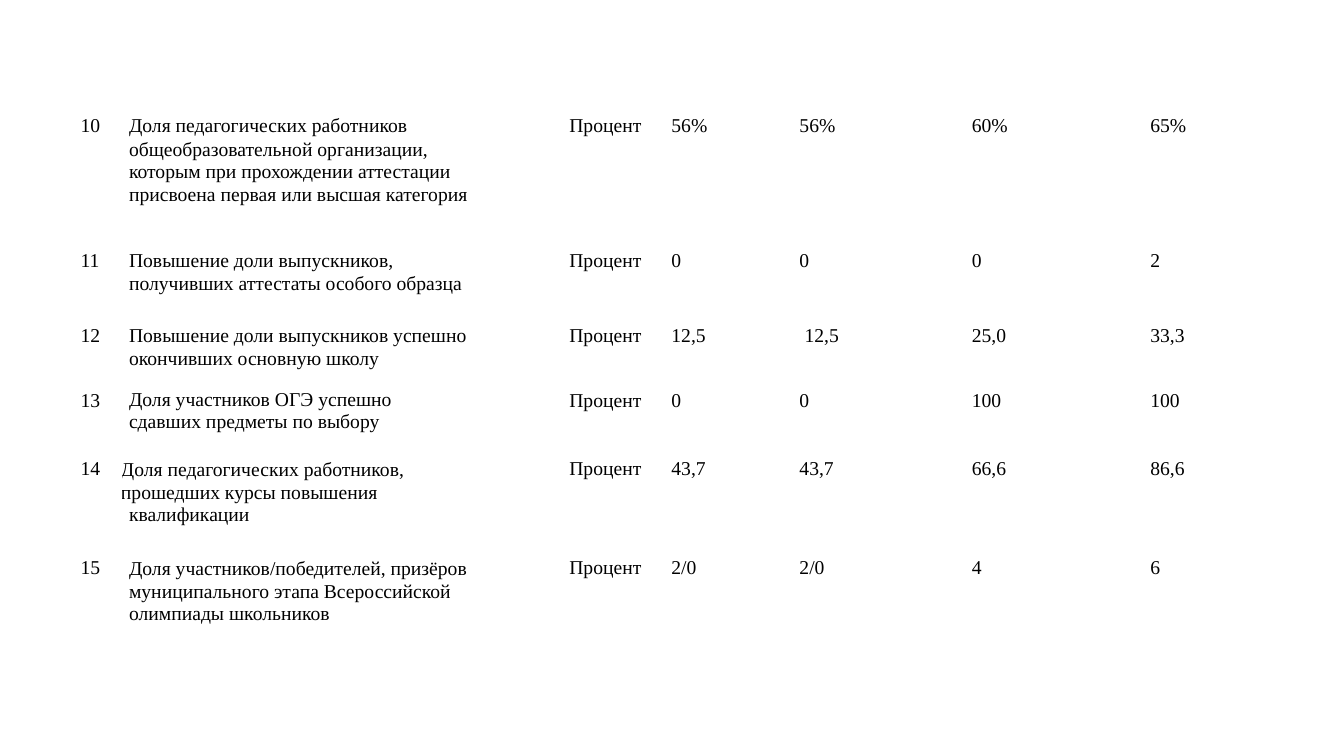
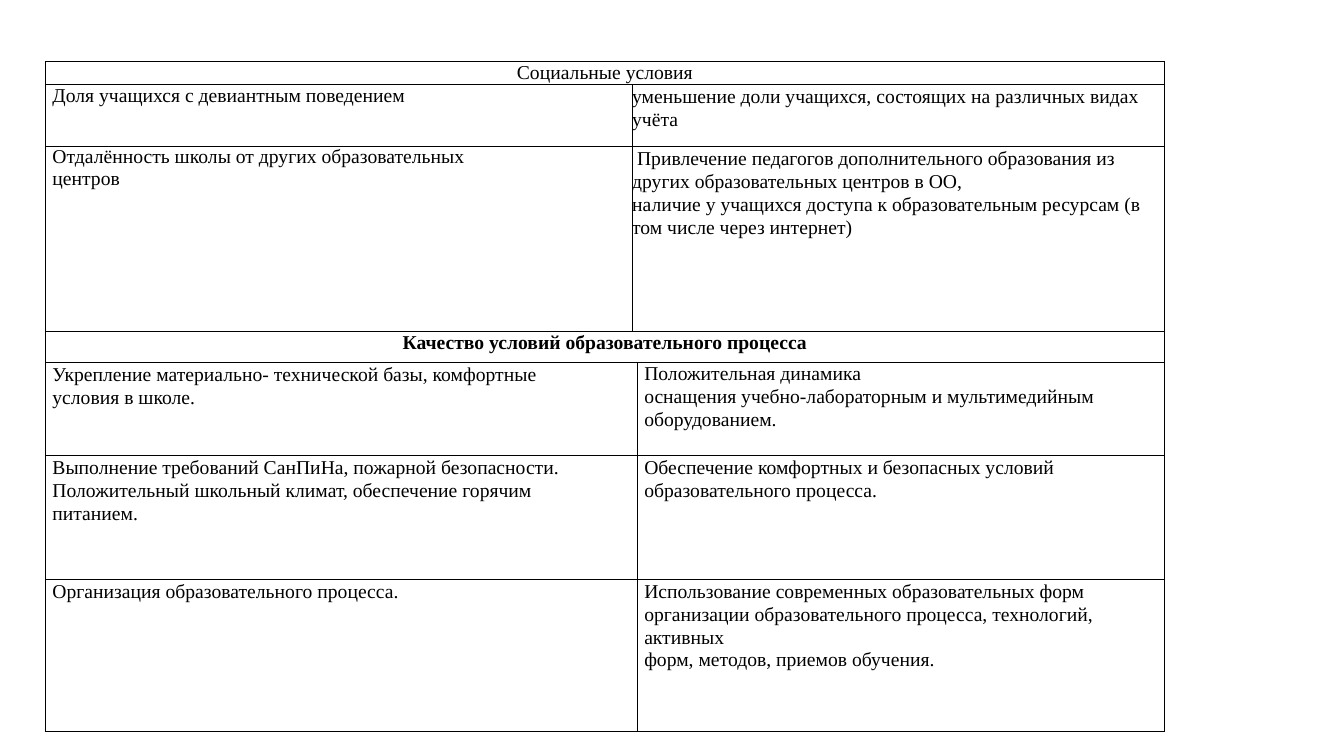
"""Build two slides with tables of school development indicators."""
from dataclasses import dataclass
from typing import Optional, Union

from lxml import etree
from pptx import Presentation
from pptx.dml.color import RGBColor
from pptx.enum.text import PP_ALIGN
from pptx.oxml.ns import qn
from pptx.util import Inches, Pt

LEFT = PP_ALIGN.LEFT
CENTER = PP_ALIGN.CENTER
FONT = "Times New Roman"
TEXT_SIZE = 14
BLACK = "000000"
BORDER_SIDES = ("a:lnL", "a:lnR", "a:lnT", "a:lnB")
BLANK_LAYOUT = 6
PROPORTIONAL = 1.07
INDICATOR_COLUMNS = (0.47, 4.23, 1.15, 1.27, 1.71, 1.77, 1.54)
CONDITION_COLUMNS = (5.82, 0.05, 5.23)


@dataclass(frozen=True)
class Line:
    """A paragraph; its spacing is a multiple or a length in points."""

    text: str
    spacing: Union[float, Pt] = PROPORTIONAL
    indent: float = 0.08
    align: PP_ALIGN = LEFT
    bold: bool = False


@dataclass(frozen=True)
class Entry:
    """The content of a table cell."""

    lines: tuple[Line, ...] = ()
    span: int = 1
    right_indent: float = 0


@dataclass(frozen=True)
class Row:
    """A table row."""

    height: float
    entries: tuple[Entry, ...]


@dataclass(frozen=True)
class Indicator:
    """A numbered indicator with its values over the years."""

    number: int
    height: float
    description: tuple[Line, ...]
    values: tuple[str, ...]
    spacing: Union[float, Pt] = Pt(16)
    right_indent: float = 0.78


def color(value: str) -> RGBColor:
    """Return the colour for a hex string."""
    return RGBColor.from_string(value)


def write_text(paragraph, text: str, *, spacing, indent: float = 0, right_indent: float = 0,
               align: PP_ALIGN = LEFT, bold: bool = False) -> None:
    """Write formatted text into a paragraph."""
    paragraph.alignment = align
    paragraph.line_spacing = spacing
    properties = paragraph._p.get_or_add_pPr()
    properties.set("marL", str(Inches(indent)))
    properties.set("marR", str(Inches(right_indent)))
    properties.set("indent", "0")
    run = paragraph.add_run()
    run.text = text
    run.font.name = FONT
    run.font.size = Pt(TEXT_SIZE)
    run.font.bold = bold
    run.font.color.rgb = color(BLACK)


def set_borders(cell, hex_color: str, width: float) -> None:
    """Draw the four borders of a cell."""
    properties = cell._tc.get_or_add_tcPr()
    for position, side in enumerate(BORDER_SIDES):
        border = etree.Element(qn(side), w=str(Pt(width)))
        fill = etree.SubElement(border, qn("a:solidFill"))
        etree.SubElement(fill, qn("a:srgbClr"), val=hex_color)
        properties.insert(position, border)


def fill_cell(cell, entry: Entry) -> None:
    """Write the lines of an entry into a cell, or make an empty cell small."""
    frame = cell.text_frame
    if not entry.lines:
        etree.SubElement(frame.paragraphs[0]._p, qn("a:endParaRPr"), sz="100")
    for position, line in enumerate(entry.lines):
        paragraph = frame.add_paragraph() if position else frame.paragraphs[0]
        write_text(paragraph, line.text, spacing=line.spacing, indent=line.indent,
                   right_indent=entry.right_indent, align=line.align, bold=line.bold)


def draw_table(slide, left: float, top: float, columns: tuple[float, ...],
               rows: list[Row], border: Optional[str] = None) -> None:
    """Add a table without fill to a slide."""
    height = sum(row.height for row in rows)
    table = slide.shapes.add_table(len(rows), len(columns), Inches(left), Inches(top),
                                   Inches(sum(columns)), Inches(height)).table
    table.first_row = False
    table.horz_banding = False
    for column, width in zip(table.columns, columns):
        column.width = Inches(width)
    for cell in table.iter_cells():
        cell.margin_left = cell.margin_right = cell.margin_top = cell.margin_bottom = 0
        cell.fill.background()
        if border:
            set_borders(cell, border, 1)
    for row_index, row in enumerate(rows):
        table.rows[row_index].height = Inches(row.height)
        column_index = 0
        for entry in row.entries:
            cell = table.cell(row_index, column_index)
            column_index += entry.span
            if entry.span > 1:
                cell.merge(table.cell(row_index, column_index - 1))
            fill_cell(cell, entry)


def indicator_row(indicator: Indicator) -> Row:
    """Lay out an indicator as a table row."""
    spacing = indicator.spacing
    number = Entry((Line(str(indicator.number), spacing, 0.07),))
    description = Entry(indicator.description, right_indent=indicator.right_indent)
    unit = Entry((Line("Процент", spacing, 0, CENTER),))
    values = tuple(
        Entry((Line(value, spacing, 0.13 if (indicator.number, position) == (12, 1) else 0.08),))
        for position, value in enumerate(indicator.values))
    return Row(indicator.height, (number, description, unit, *values))


def heading(text: str, height: float, spacing: Pt, bold: bool = False) -> Row:
    """Make a centred heading row across the table."""
    return Row(height, (Entry((Line(text, spacing, 0, CENTER, bold),), 3),))


def pair(height: float, left: tuple[Line, ...], right: tuple[Line, ...],
         left_span: int, left_indent: float) -> Row:
    """Make a row with a measure and its expected result."""
    return Row(height, (Entry(left, left_span, left_indent), Entry(right, 3 - left_span, 0.15)))


def text_line(text: str, spacing: Union[float, Pt] = PROPORTIONAL) -> Line:
    """Make a line with the indent of the conditions table."""
    return Line(text, spacing, 0.07)


INDICATORS = (
    Indicator(10, 1.34, (
        Line("Доля педагогических работников общеобразовательной организации,"),
        Line("которым при прохождении аттестации присвоена первая или высшая категория", Pt(16.1)),
    ), ("56%", "56%", "60%", "65%")),
    Indicator(11, 0.75, (
        Line("Повышение доли выпускников,", Pt(16.1)),
        Line("получивших аттестаты особого образца"),
    ), ("0", "0", "0", "2"), PROPORTIONAL),
    Indicator(12, 0.63, (
        Line("Повышение доли выпускников успешно окончивших основную школу", Pt(16.1)),
    ), ("12,5", "12,5", "25,0", "33,3")),
    Indicator(13, 0.69, (
        Line("Доля участников ОГЭ успешно сдавших предметы по выбору", Pt(16.1)),
    ), ("0", "0", "100", "100"), PROPORTIONAL, 1),
    Indicator(14, 0.98, (
        Line("Доля педагогических работников, прошедших курсы повышения", indent=0),
        Line("квалификации", Pt(15.8)),
    ), ("43,7", "43,7", "66,6", "86,6")),
    Indicator(15, 1.03, (
        Line("Доля участников/победителей, призёров муниципального этапа Всероссийской"),
        Line("олимпиады школьников", Pt(15.7)),
    ), ("2/0", "2/0", "4", "6")),
)

CONDITIONS = [
    heading("Социальные условия", 0.23, Pt(15.6)),
    pair(0.61, (text_line("Доля учащихся с девиантным поведением", Pt(15.6)),), (
        Line("уменьшение доли учащихся, состоящих на различных видах учёта", indent=0),
    ), 1, 0),
    pair(1.84, (text_line("Отдалённость школы от других образовательных центров", 1.0),), (
        Line(" Привлечение педагогов дополнительного образования из других "
             "образовательных центров в ОО,", indent=0),
        Line("наличие у учащихся доступа к образовательным ресурсам "
             "(в том числе через интернет)", indent=0),
    ), 1, 1.2),
    heading("Качество условий образовательного процесса", 0.31, Pt(15.7), True),
    pair(0.92, (
        text_line("Укрепление материально- технической базы, комфортные условия в школе."),
    ), (
        text_line("Положительная динамика", Pt(15.4)),
        text_line("оснащения учебно-лабораторным и мультимедийным оборудованием."),
    ), 2, 0.5),
    pair(1.23, (
        text_line("Выполнение требований СанПиНа, пожарной безопасности."),
        text_line("Положительный школьный климат, обеспечение горячим питанием."),
    ), (
        text_line("Обеспечение комфортных и безопасных условий"),
        text_line("образовательного процесса."),
    ), 2, 0.5),
    pair(1.51, (text_line("Организация образовательного процесса."),), (
        text_line("Использование современных образовательных форм"),
        text_line("организации образовательного процесса, технологий, активных"),
        text_line("форм, методов, приемов обучения.", Pt(15.8)),
    ), 2, 0.5),
]


def main() -> None:
    """Build and save the presentation."""
    presentation = Presentation()
    presentation.slide_width = Inches(13.33)
    presentation.slide_height = Inches(7.5)
    layout = presentation.slide_layouts[BLANK_LAYOUT]
    empty_row = Row(0.04, (Entry(),) * len(INDICATOR_COLUMNS))
    draw_table(presentation.slides.add_slide(layout), 0.73, 1.09, INDICATOR_COLUMNS,
               [empty_row, *map(indicator_row, INDICATORS)])
    draw_table(presentation.slides.add_slide(layout), 0.45, 0.61, CONDITION_COLUMNS,
               CONDITIONS, BLACK)
    presentation.save("out.pptx")


if __name__ == "__main__":
    main()
